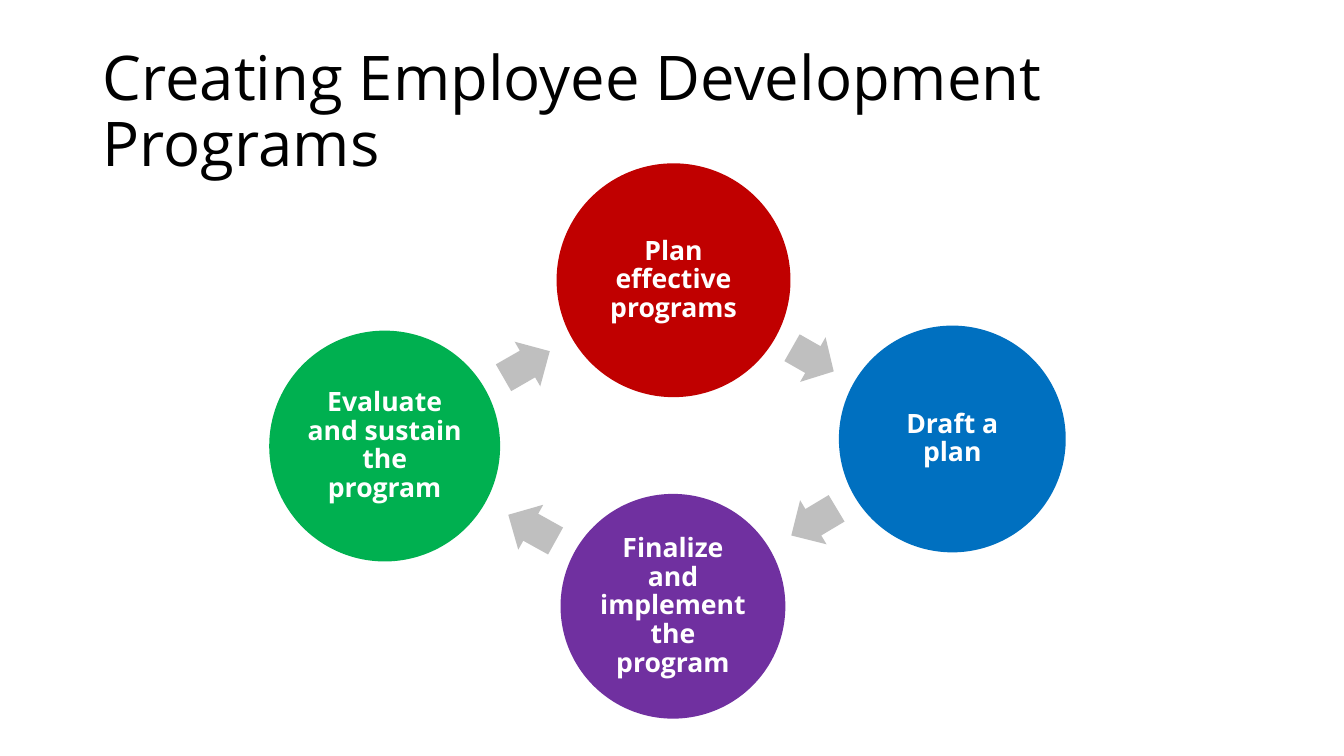
"""Build a slide showing the four-step cycle of employee development programs."""
from math import atan2, degrees, hypot

from pptx import Presentation
from pptx.dml.color import RGBColor
from pptx.enum.shapes import MSO_SHAPE
from pptx.enum.text import MSO_ANCHOR, PP_ALIGN
from pptx.util import Inches, Pt

OVAL, ARROW = MSO_SHAPE.OVAL, MSO_SHAPE.RIGHT_ARROW
MIDDLE, CENTER = MSO_ANCHOR.MIDDLE, PP_ALIGN.CENTER
BLACK = RGBColor(0x00, 0x00, 0x00)
WHITE = RGBColor(0xFF, 0xFF, 0xFF)
RED = RGBColor(0xC0, 0x00, 0x00)
BLUE = RGBColor(0x00, 0x70, 0xC0)
PURPLE = RGBColor(0x70, 0x30, 0xA0)
GREEN = RGBColor(0x00, 0xB0, 0x50)
GRAY = RGBColor(0xBF, 0xBF, 0xBF)
FONT = "Open Sans"
CELL = Inches(0.1)
ARROW_HEIGHT = 5.1
ARROW_SHARE = 0.53
ARROW_POSITION = 0.48

# Each step: text, colour, centre column, centre row, diameter in grid cells.
STEPS = [
    ("Plan effective programs", RED, 66.8, 27.8, 23.2),
    ("Draft a plan", BLUE, 94.45, 43.55, 22.5),
    ("Finalize and implement the program", PURPLE, 66.75, 60.15, 22.3),
    ("Evaluate and sustain the program", GREEN, 38.15, 44.25, 22.9),
]


def add_centered(kind, column, row, width, height, color):
    """Add a plain filled shape around a grid point."""
    shape = slide.shapes.add_shape(
        kind, int((column - width / 2) * CELL), int((row - height / 2) * CELL),
        int(width * CELL), int(height * CELL))
    shape.shadow.inherit = False
    shape.fill.solid()
    shape.fill.fore_color.rgb = color
    shape.line.fill.background()
    return shape


def write_text(frame, text, size, color, bold):
    """Write one wrapped, vertically centred paragraph and return it."""
    frame.word_wrap = True
    frame.vertical_anchor = MIDDLE
    paragraph = frame.paragraphs[0]
    paragraph.text = text
    paragraph.line_spacing = 0.9
    paragraph.font.name = FONT
    paragraph.font.size = Pt(size)
    paragraph.font.bold = bold
    paragraph.font.color.rgb = color
    return paragraph


presentation = Presentation()
presentation.slide_width = Inches(13.33)
presentation.slide_height = Inches(7.5)
slide = presentation.slides.add_slide(presentation.slide_layouts[6])

title = slide.shapes.add_textbox(
    int(9.2 * CELL), 4 * CELL, 115 * CELL, int(14.5 * CELL))
write_text(title.text_frame, "Creating Employee Development Programs", 44, BLACK, False)

for index, (text, color, column, row, diameter) in enumerate(STEPS):
    circle = add_centered(OVAL, column, row, diameter, diameter, color)
    frame = circle.text_frame
    frame.margin_left = frame.margin_right = Inches(0.03)
    frame.margin_top = frame.margin_bottom = Inches(0.03)
    write_text(frame, text, 19, WHITE, True).alignment = CENTER

    _, _, next_column, next_row, next_diameter = STEPS[(index + 1) % len(STEPS)]
    across, down = next_column - column, next_row - row
    distance = hypot(across, down)
    gap = distance - (diameter + next_diameter) / 2
    share = (diameter / 2 + gap * ARROW_POSITION) / distance
    arrow = add_centered(ARROW, column + across * share, row + down * share,
                         gap * ARROW_SHARE, ARROW_HEIGHT, GRAY)
    arrow.rotation = degrees(atan2(down, across)) % 360
    arrow.adjustments[0] = 0.6
    arrow.adjustments[1] = 0.5

presentation.save("out.pptx")
